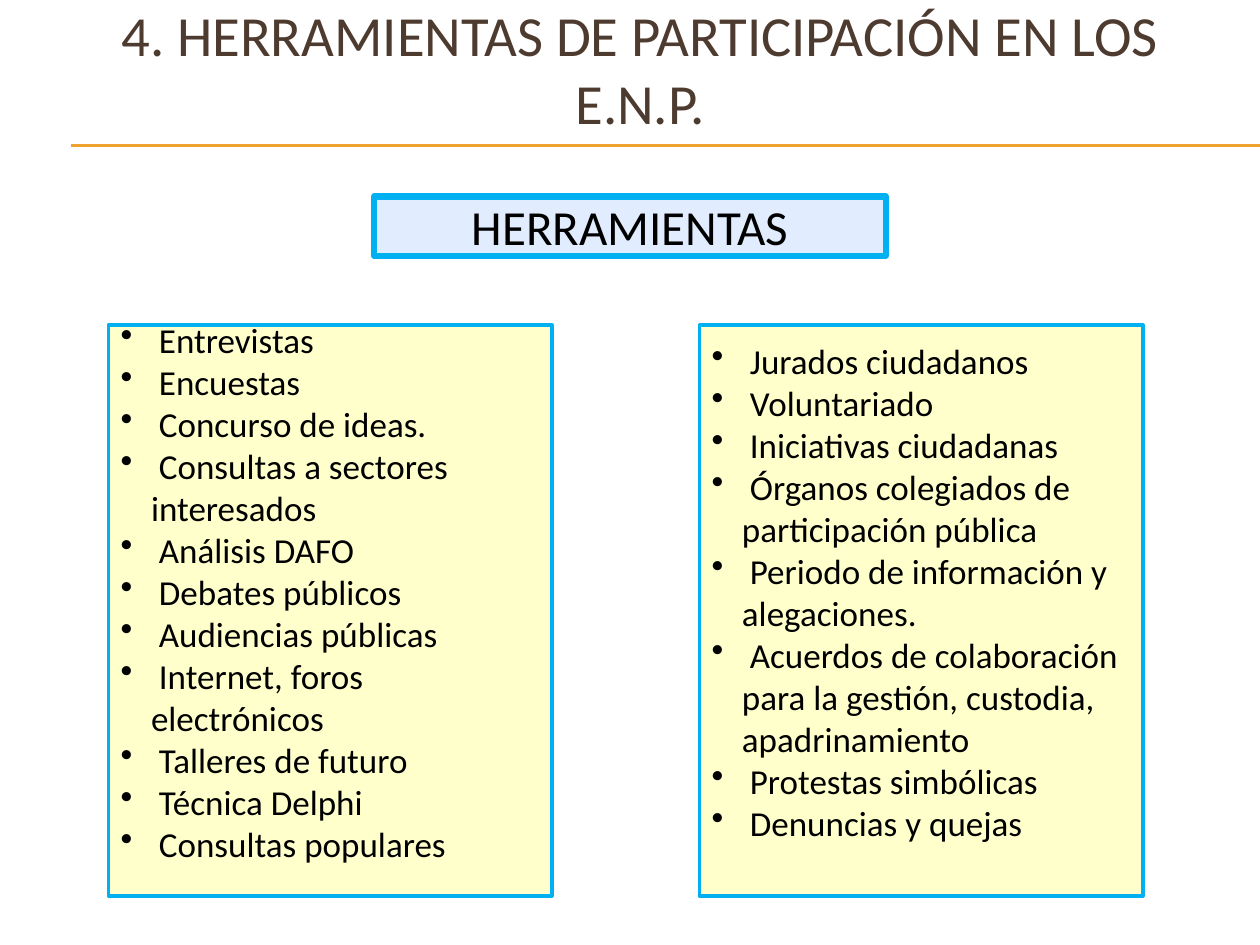
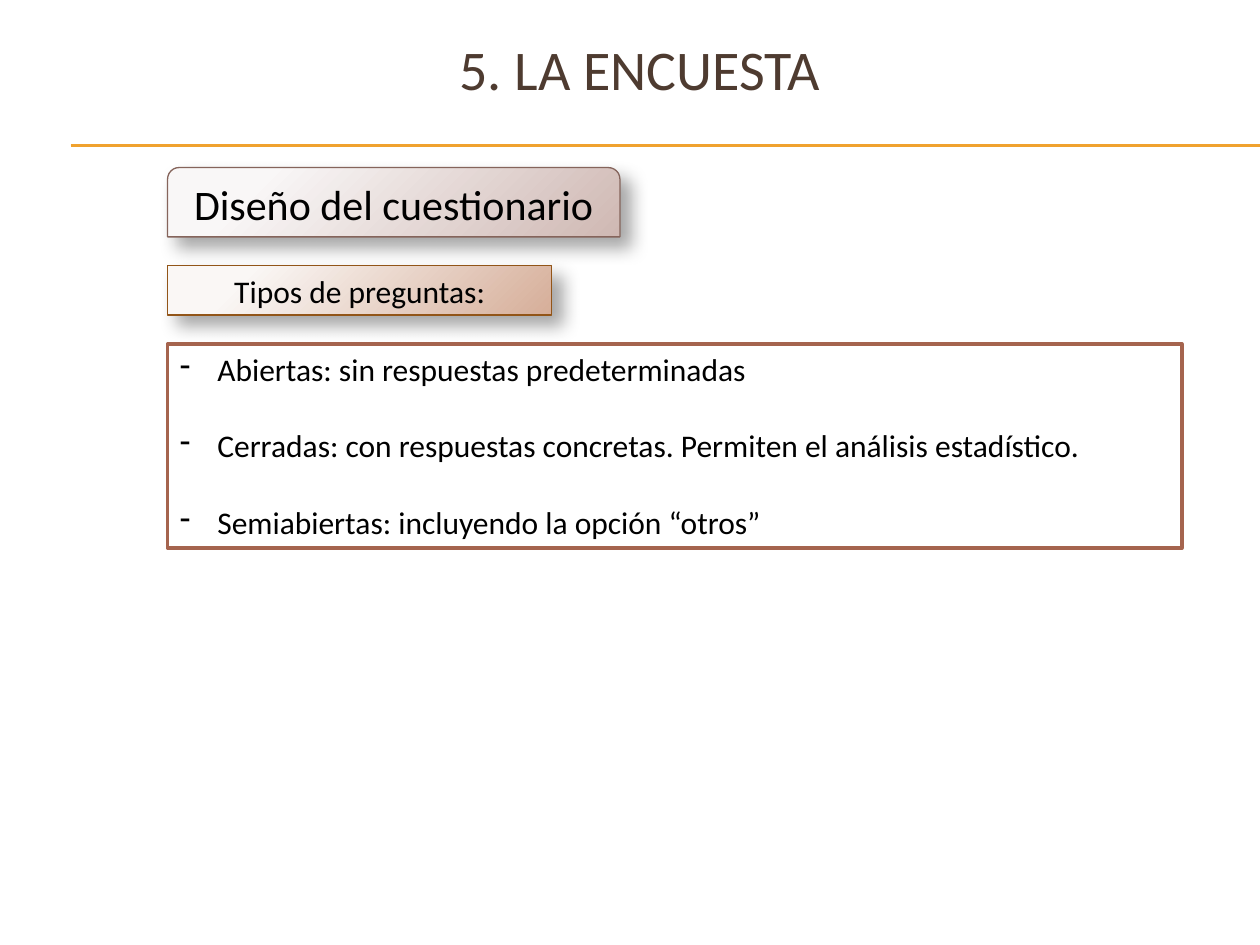
from lxml.etree import SubElement as Sub
from pptx import Presentation
from pptx.dml.color import RGBColor as RGB
from pptx.enum.shapes import MSO_CONNECTOR as Link, MSO_SHAPE as Form
from pptx.enum.text import MSO_ANCHOR as Anchor, MSO_AUTO_SIZE as Fit, PP_ALIGN as Align
from pptx.oxml import parse_xml
from pptx.oxml.ns import nsdecls, qn
from pptx.util import Inches, Pt

FONT = "Calibri"
HUES = {
    "title": "4E3B30", "rule": "F0A22E", "text": "000000", "white": "FFFFFF",
    "sky": "00B0F0", "ice": "E1EDFF", "cream": "FFFFCC", "brick": "A5644E",
    "rose": ("F9F7F7", "CFB8B3"), "rose edge": "85645B",
    "sand": ("FAF7F5", "D6AE99"), "sand edge": "925518",
}
HANG = Inches(0.24)

TOOLS = [
    ["Entrevistas", "Encuestas", "Concurso de ideas.",
     "Consultas a sectores interesados", "Análisis DAFO", "Debates públicos",
     "Audiencias públicas", "Internet, foros electrónicos",
     "Talleres de futuro", "Técnica Delphi", "Consultas populares"],
    ["Jurados ciudadanos", "Voluntariado", "Iniciativas ciudadanas",
     "Órganos colegiados de participación pública",
     "Periodo de información y alegaciones.",
     "Acuerdos de colaboración para la gestión, custodia, apadrinamiento",
     "Protestas simbólicas", "Denuncias y quejas"],
]
KINDS = [
    "Abiertas: sin respuestas predeterminadas",
    "Cerradas: con respuestas concretas. Permiten el análisis estadístico.",
    "Semiabiertas: incluyendo la opción “otros”",
]


def hue(name):
    return RGB.from_string(HUES[name])


def write(para, text, size, color="text", align=Align.CENTER):
    para.alignment = align
    run = para.add_run()
    run.text = text
    run.font.name, run.font.size = FONT, Pt(size)
    run.font.color.rgb = hue(color)


def add_box(slide, box, fill, edge, width, form=Form.RECTANGLE):
    """Add a flat outlined shape with its text centred vertically."""
    shape = slide.shapes.add_shape(form, *map(Inches, box))
    shape.shadow.inherit = False
    shape.fill.solid()
    shape.fill.fore_color.rgb = hue(fill)
    shape.line.color.rgb = hue(edge)
    shape.line.width = Pt(width)
    shape.text_frame.word_wrap = True
    shape.text_frame.vertical_anchor = Anchor.MIDDLE
    return shape


def add_list(shape, items, mark, size, gap=0):
    """Fill a shape with marked lines on a hanging indent."""
    frame = shape.text_frame
    for i, item in enumerate(items):
        para = frame.add_paragraph() if i else frame.paragraphs[0]
        write(para, " " + item, size, align=Align.LEFT)
        para.space_before = Pt(gap if i else 0)
        props = para._p.get_or_add_pPr()
        props.set("marL", str(HANG))
        props.set("indent", str(-HANG))
        Sub(props, qn("a:buChar"), char=mark)


def add_tag(slide, box, text, size, tone, form=Form.RECTANGLE):
    """Add a label with a radial gradient and a soft shadow."""
    shape = add_box(slide, box, "white", tone + " edge", 0.75, form)
    props = shape._element.spPr
    near, far = HUES[tone]
    grad = parse_xml(
        f'<a:gradFill {nsdecls("a")} rotWithShape="1"><a:gsLst>'
        f'<a:gs pos="20000"><a:srgbClr val="{near}"/></a:gs>'
        f'<a:gs pos="100000"><a:srgbClr val="{far}"/></a:gs></a:gsLst>'
        '<a:path path="circle"><a:fillToRect l="-15000" t="-15000" '
        'r="115000" b="115000"/></a:path></a:gradFill>')
    props.replace(props.find(qn("a:solidFill")), grad)
    shade = Sub(props.find(qn("a:effectLst")), qn("a:outerShdw"),
                blurRad=str(Pt(10.2)), dist=str(Pt(8)), dir=str(45 * 60000),
                algn="tl", rotWithShape="0")
    black = Sub(shade, qn("a:srgbClr"), val=HUES["text"])
    Sub(black, qn("a:alpha"), val="35000")
    write(shape.text_frame.paragraphs[0], text, size)


def add_page(deck, text, size):
    """Start a slide with its title and the double rule under it."""
    slide = deck.slides.add_slide(deck.slide_layouts[5])
    for y in (1.15, 1.16):
        rule = slide.shapes.add_connector(
            Link.STRAIGHT, Inches(0.56), Inches(y), Inches(10), Inches(y))
        rule.line.color.rgb = hue("rule")
        rule.line.width = Pt(0.75)
        Sub(rule._element.spPr, qn("a:effectLst"))
    title = slide.shapes.title
    title.left, title.top, title.width, title.height = map(
        Inches, (0.33, 0.08, 9.5, 0.92))
    frame = title.text_frame
    frame.auto_size, frame.word_wrap = Fit.NONE, True
    frame.vertical_anchor = Anchor.MIDDLE
    write(frame.paragraphs[0], text, size, "title")
    return slide


def tool_page(deck):
    slide = add_page(deck, "4. HERRAMIENTAS DE PARTICIPACIÓN EN LOS E.N.P.", 32.4)
    # Heading
    head = add_box(slide, (2.97, 1.56, 4.06, 0.47), "ice", "sky", 3.5)
    write(head.text_frame.paragraphs[0], "HERRAMIENTAS", 28)
    # Two columns of tools
    for i, items in enumerate(TOOLS):
        panel = add_box(slide, (0.86 + i * 4.69, 2.58, 3.52, 4.53), "cream", "sky", 2)
        panel.text_frame.margin_bottom = Inches(0.35)
        add_list(panel, items, "•", 20)


def poll_page(deck):
    slide = add_page(deck, "5. LA ENCUESTA", 32)
    left = 1.33
    # Labels
    add_tag(slide, (left, 2.11, 3.05, 0.39), "Tipos de preguntas:", 18, "sand")
    add_tag(slide, (left, 1.33, 3.59, 0.55), "Diseño del cuestionario", 24,
            "rose", Form.ROUND_2_SAME_RECTANGLE)
    # Question types
    panel = add_box(slide, (left, 2.73, 8.05, 1.62), "white", "brick", 2)
    panel.text_frame.vertical_anchor = Anchor.TOP
    add_list(panel, KINDS, "-", 18, 22)


def main():
    deck = Presentation()
    deck.slide_width, deck.slide_height = Inches(10), Inches(7.5)
    tool_page(deck)
    poll_page(deck)
    deck.save("out.pptx")


if __name__ == "__main__":
    main()
